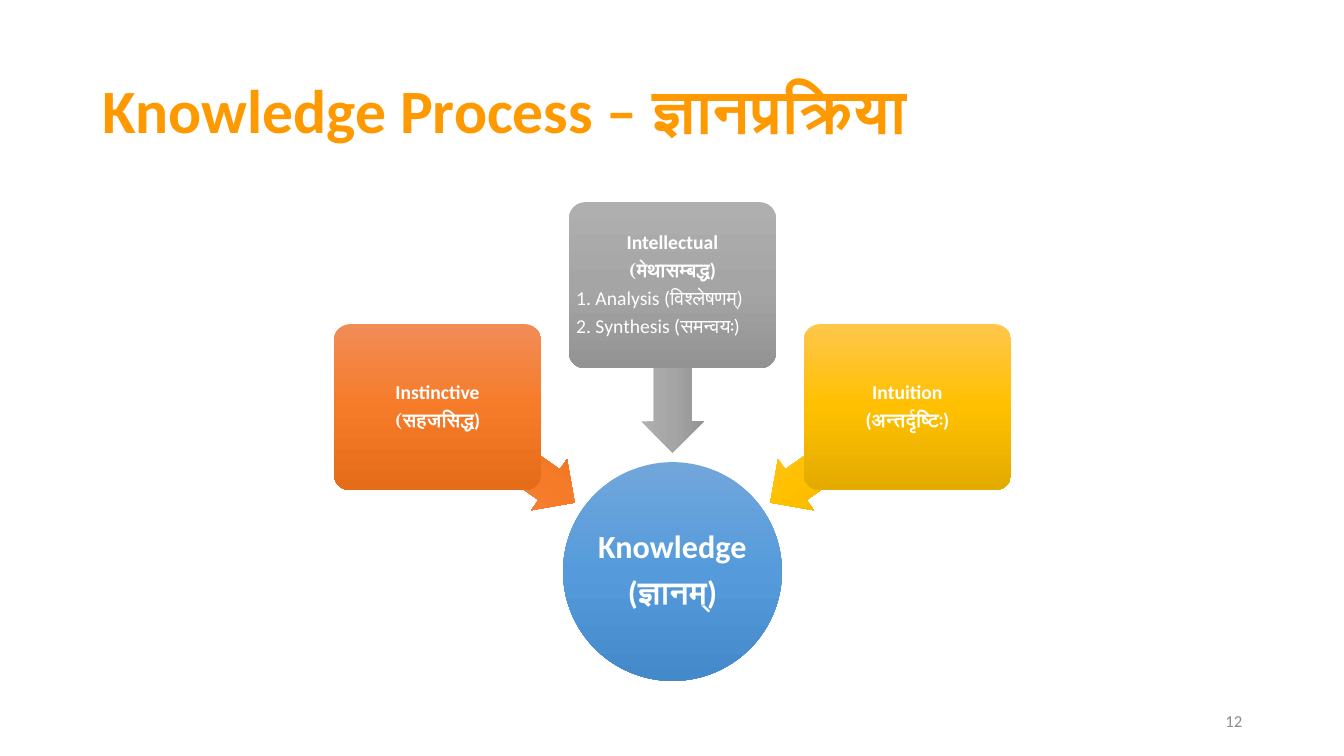
from copy import deepcopy
from pptx import Presentation
from pptx.dml.color import RGBColor
from pptx.enum.shapes import MSO_SHAPE
from pptx.enum.text import MSO_ANCHOR, PP_ALIGN
from pptx.oxml.ns import qn
from pptx.util import Inches, Pt
from lxml import etree

LEFT, CENTER, RIGHT = PP_ALIGN.LEFT, PP_ALIGN.CENTER, PP_ALIGN.RIGHT
MIDDLE = MSO_ANCHOR.MIDDLE
ELLIPSE, ARROW, CARD = MSO_SHAPE.OVAL, MSO_SHAPE.LEFT_ARROW, MSO_SHAPE.ROUNDED_RECTANGLE
LATIN, INDIC = "Calibri", "TeX Gyre Schola"
TITLE = RGBColor(0xFF, 0x99, 0x00)
WHITE = RGBColor(0xFF, 0xFF, 0xFF)
MUTED = RGBColor(0x8C, 0x8C, 0x8C)
BLUES = [RGBColor(0x71, 0xA6, 0xDB), RGBColor(0x55, 0x9B, 0xDB), RGBColor(0x44, 0x8A, 0xCA)]
ORANGES = [RGBColor(0xF1, 0x8C, 0x57), RGBColor(0xF6, 0x7B, 0x28), RGBColor(0xE5, 0x6C, 0x19)]
GREYS = [RGBColor(0xAF, 0xAF, 0xAF), RGBColor(0xA5, 0xA5, 0xA5), RGBColor(0x93, 0x93, 0x93)]
YELLOWS = [RGBColor(0xFF, 0xC6, 0x4B), RGBColor(0xFF, 0xC0, 0x00), RGBColor(0xE3, 0xAB, 0x00)]

prs = Presentation()
prs.slide_width, prs.slide_height = Inches(13.33), Inches(7.5)
s = prs.slides.add_slide(prs.slide_layouts[6])


def add_shape(kind, cx, cy, w, h, colors, adjustments=(), rotation=0):
    sp = s.shapes.add_shape(kind, Inches(cx - w / 2), Inches(cy - h / 2), Inches(w), Inches(h))
    sp.shadow.inherit = False
    sp.line.fill.background()
    sp.rotation = rotation
    for i, value in enumerate(adjustments):
        sp.adjustments[i] = value
    sp.fill.gradient()
    sp.fill.gradient_angle = 270
    stops = sp._element.spPr.find(qn("a:gradFill")).find(qn("a:gsLst"))
    stops.insert(1, deepcopy(stops[0]))
    for stop, color, position in zip(sp.fill.gradient_stops, colors, (0, 0.5, 1)):
        stop.color.rgb = color
        stop.position = position


def add_text(x, y, w, h, lines, size, color, inset=None, after=0, spacing=0.9):
    tf = s.shapes.add_textbox(Inches(x), Inches(y), Inches(w), Inches(h)).text_frame
    tf.word_wrap = True
    tf.vertical_anchor = MIDDLE
    if inset is not None:
        tf.margin_left = tf.margin_right = tf.margin_top = tf.margin_bottom = Inches(inset)
    for i, (align, bold, parts) in enumerate(lines):
        p = tf.add_paragraph() if i else tf.paragraphs[0]
        p.alignment, p.line_spacing, p.space_after = align, spacing, Pt(after)
        p.font.size, p.font.bold, p.font.color.rgb = Pt(size), bold, color
        for j, part in enumerate(parts):
            if part:
                r = p.add_run()
                r.text = part
                r.font.size, r.font.bold, r.font.color.rgb = Pt(size), bold, color
                r.font.name = INDIC if j % 2 else LATIN
                if j % 2:
                    etree.SubElement(r.font._element, qn("a:cs"), typeface=INDIC)


add_text(0.92, 0.4, 11.5, 1.45,
         [(LEFT, True, ("Knowledge Process – ", "ज्ञानप्रक्रिया"))], 44, TITLE)

MID_X = 6.67
add_shape(ELLIPSE, MID_X, 5.67, 2.17, 2.17, BLUES)
add_text(MID_X - 0.77, 4.9, 1.54, 1.54,
         [(CENTER, True, ("Knowledge",)), (CENTER, True, ("(", "ज्ञानम्", ")"))],
         23, WHITE, 0.02, 8)

SOURCES = [
    (-1, 4.04, 4.51, 215, ORANGES,
     [(CENTER, True, ("Instinctive",)), (CENTER, True, ("", "(सहजसिद्ध", ")"))]),
    (0, 2.83, 3.66, 270, GREYS,
     [(CENTER, True, ("Intellectual",)), (CENTER, True, ("", "(मेथासम्बद्ध", ")")),
      (LEFT, False, ("1. Analysis (", "विश्लेषणम्", ")")),
      (LEFT, False, ("2. Synthesis (", "समन्वयः", ")"))]),
    (1, 4.04, 4.51, 325, YELLOWS,
     [(CENTER, True, ("Intuition",)), (CENTER, True, ("(", "अन्तर्दृष्टिः", ")"))]),
]
for side, card_y, arrow_y, rotation, colors, lines in SOURCES:
    card_x = MID_X + side * 2.33
    add_shape(ARROW, MID_X + side * 1.65, arrow_y, 1.66, 0.62, colors, (0.6, 0.5), rotation)
    add_shape(CARD, card_x, card_y, 2.06, 1.65, colors, (0.1,))
    add_text(card_x - 0.985, card_y - 0.775, 1.97, 1.55, lines, 14, WHITE, 0.03, 4.9)

add_text(9.42, 6.95, 3, 0.4, [(RIGHT, False, ("12",))], 12, MUTED, spacing=1)

prs.save("out.pptx")
